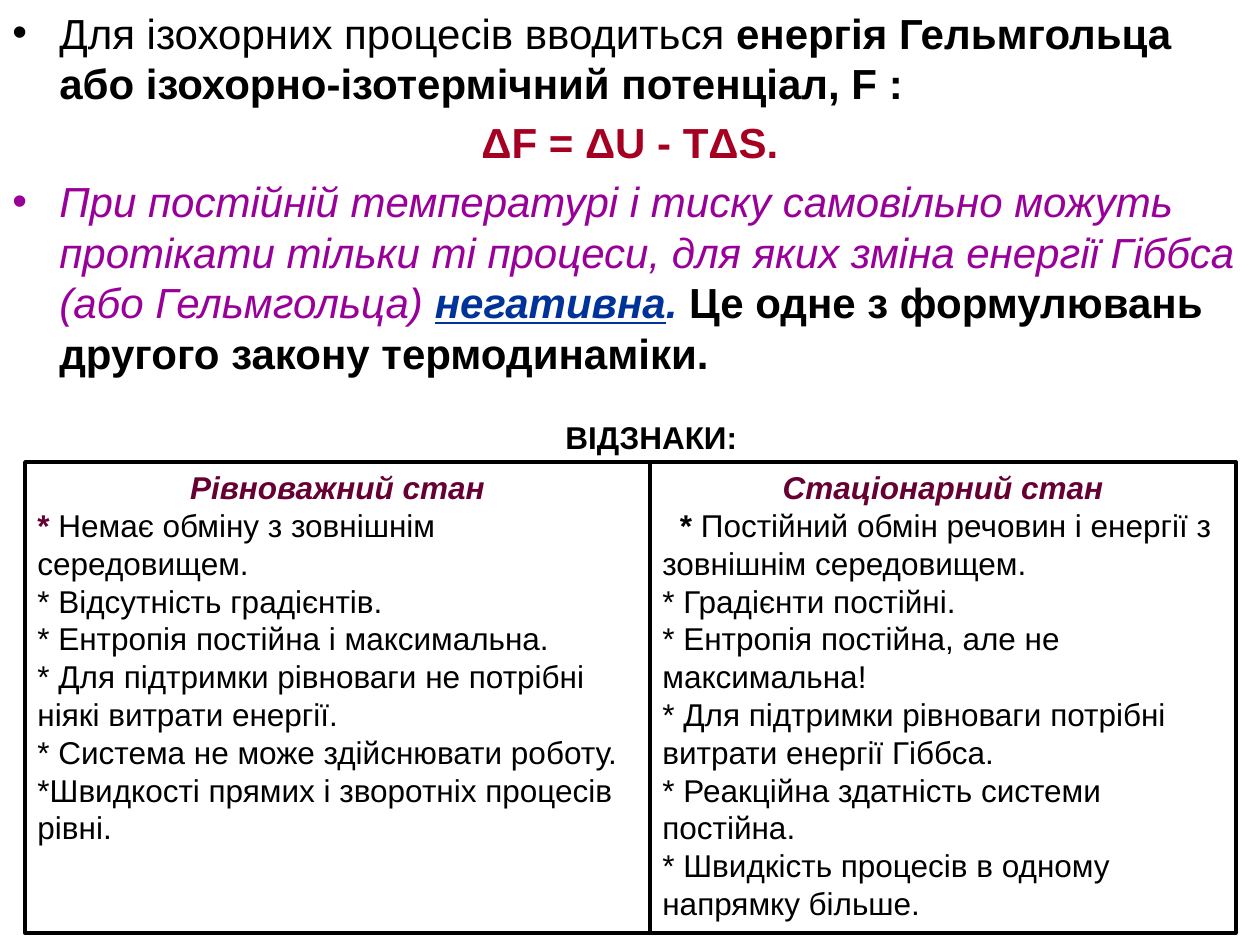
from lxml import etree
from pptx import Presentation
from pptx.dml.color import RGBColor
from pptx.enum.shapes import MSO_SHAPE
from pptx.enum.text import MSO_ANCHOR, MSO_AUTO_SIZE, PP_ALIGN
from pptx.oxml.ns import qn
from pptx.util import Emu, Pt

RECT = MSO_SHAPE.RECTANGLE
TOP = MSO_ANCHOR.TOP
GROW = MSO_AUTO_SIZE.SHAPE_TO_FIT_TEXT
LEFT, CENTER = PP_ALIGN.LEFT, PP_ALIGN.CENTER

BLACK = RGBColor(0x00, 0x00, 0x00)
WHITE = RGBColor(0xFF, 0xFF, 0xFF)
RED = RGBColor(0xA5, 0x00, 0x21)
PURPLE = RGBColor(0x99, 0x00, 0x99)
BLUE = RGBColor(0x00, 0x33, 0x99)
WINE = RGBColor(0x66, 0x00, 0x33)

FONT = "Arial"
BODY_SIZE, SMALL_SIZE = 24, 18
PX_PER_INCH = 126
INDENT = 47


def px(n):
    return Emu(int(n * 914400 / PX_PER_INCH))


class SlideBuilder:
    """Holds the style and the current slide, and adds its elements."""

    def __init__(self, slide):
        self.s = slide

    def paragraph(self, tf, index, runs, size, align=LEFT):
        p = tf.paragraphs[0] if index == 0 else tf.add_paragraph()
        p.alignment = align
        for text, color, marks in runs:
            r = p.add_run()
            r.text = text
            r.font.name = FONT
            r.font.size = Pt(size)
            r.font.color.rgb = color
            r.font.bold = "b" in marks
            r.font.italic = "i" in marks
            r.font.underline = "u" in marks
        return p

    def bullet(self, p):
        pPr = p._p.get_or_add_pPr()
        pPr.set("marL", str(px(INDENT)))
        pPr.set("indent", str(-px(INDENT)))
        etree.SubElement(pPr, qn("a:buFont")).set("typeface", FONT)
        etree.SubElement(pPr, qn("a:buChar")).set("char", "•")

    def body(self, x, y, w, h, paragraphs):
        tf = self.s.shapes.add_textbox(px(x), px(y), px(w), px(h)).text_frame
        tf.word_wrap = True
        for i, (bulleted, runs) in enumerate(paragraphs):
            p = self.paragraph(tf, i, runs, BODY_SIZE, LEFT if bulleted else CENTER)
            p.space_before = Pt(5)
            if bulleted:
                self.bullet(p)

    def label(self, x, y, w, h, text):
        tf = self.s.shapes.add_textbox(px(x), px(y), px(w), px(h)).text_frame
        tf.word_wrap = False
        tf.auto_size = GROW
        self.paragraph(tf, 0, [(text, BLACK, "b")], SMALL_SIZE)

    def panel(self, x, y, w, h, title, lead, items):
        sp = self.s.shapes.add_shape(RECT, px(x), px(y), px(w), px(h))
        sp.shadow.inherit = False
        sp.fill.solid()
        sp.fill.fore_color.rgb = WHITE
        sp.line.color.rgb = BLACK
        sp.line.width = Pt(2)
        tf = sp.text_frame
        tf.word_wrap = True
        tf.auto_size = GROW
        tf.vertical_anchor = TOP
        self.paragraph(tf, 0, [(title, WINE, "bi")], SMALL_SIZE, CENTER)
        self.paragraph(tf, 1, lead, SMALL_SIZE)
        for i, item in enumerate(items, 2):
            self.paragraph(tf, i, [(item, BLACK, "")], SMALL_SIZE)


def main():
    prs = Presentation()
    prs.slide_width, prs.slide_height = px(1260), px(945)
    b = SlideBuilder(prs.slides.add_slide(prs.slide_layouts[6]))

    b.body(0, 1, 1260, 944, [
        (True, [
            ("Для ізохорних процесів вводиться ", BLACK, ""),
            ("енергія Гельмгольца або ізохорно-ізотермічний потенціал, F :", BLACK, "b"),
        ]),
        (False, [("ΔF = ΔU - ТΔS.", RED, "b")]),
        (True, [
            ("При постійній температурі і тиску самовільно можуть протікати тільки "
             "ті процеси, для яких зміна енергії Гіббса (або Гельмгольца) ", PURPLE, "i"),
            ("негативна", BLUE, "biu"),
            (". ", BLUE, "bi"),
            ("Це одне з формулювань другого закону термодинаміки.", BLACK, "b"),
        ]),
    ])

    b.panel(25, 462, 625, 471, "Рівноважний стан", [
        ("* ", WINE, "b"),
        ("Немає обміну з зовнішнім середовищем.", BLACK, ""),
    ], [
        "* Відсутність градієнтів.",
        "* Ентропія постійна і максимальна.",
        "* Для підтримки рівноваги не потрібні ніякі витрати енергії.",
        "* Система не може здійснювати роботу.",
        "*Швидкості прямих і зворотніх процесів рівні.",
    ])
    b.panel(650, 462, 586, 471, "Стаціонарний стан", [
        ("  ", WINE, "bi"),
        ("* ", BLACK, "b"),
        ("Постійний обмін речовин і енергії з зовнішнім середовищем.", BLACK, ""),
    ], [
        "* Градієнти постійні.",
        "* Ентропія постійна, але не максимальна!",
        "* Для підтримки рівноваги потрібні витрати енергії Гіббса.",
        "* Реакційна здатність системи постійна.",
        "* Швидкість процесів в одному напрямку більше.",
    ])
    b.label(553, 412, 199, 50, "ВІДЗНАКИ:")

    prs.save("out.pptx")


if __name__ == "__main__":
    main()
